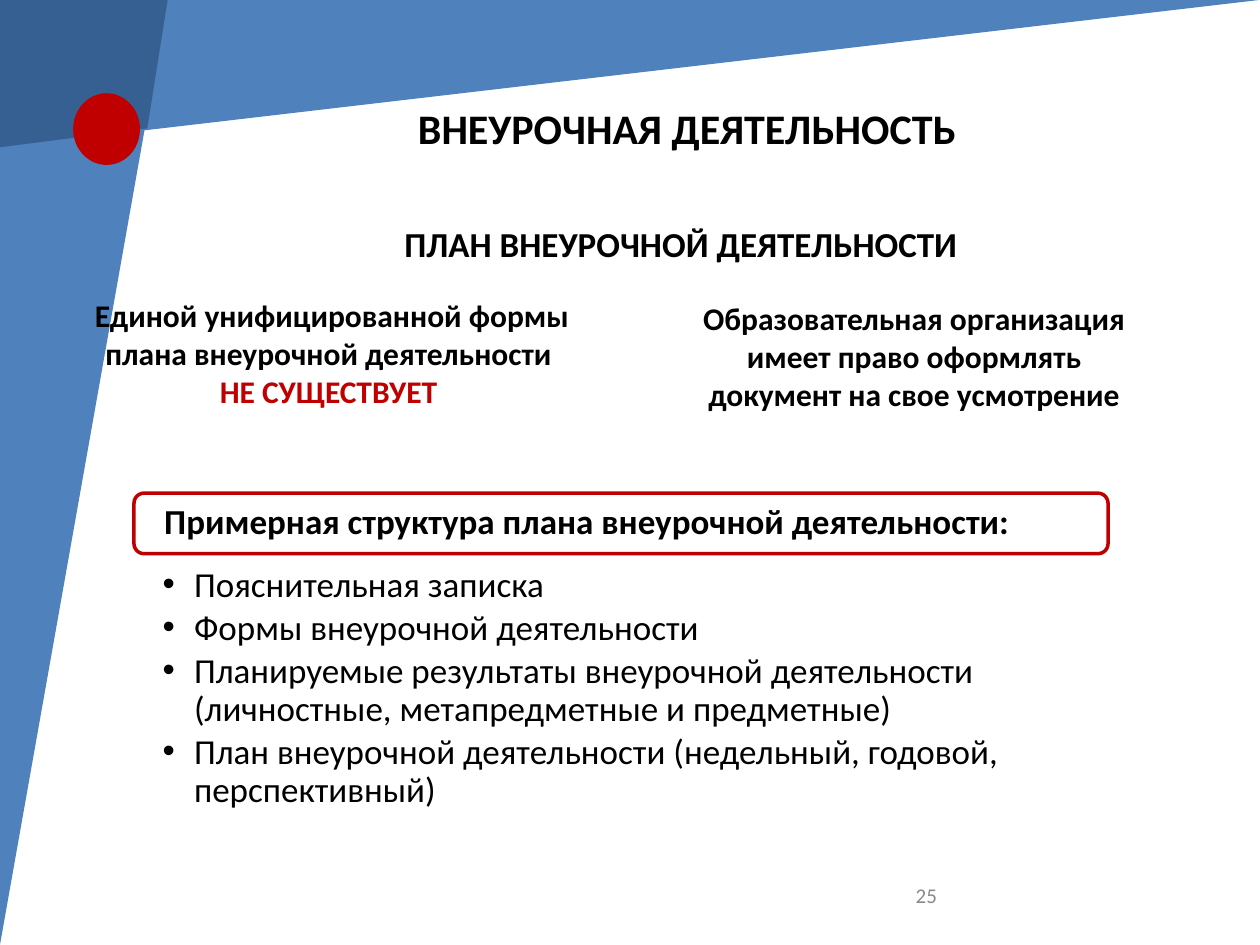
from pptx import Presentation
from pptx.dml.color import RGBColor
from pptx.enum import shapes, text
from pptx.oxml.ns import qn
from pptx.util import Pt

BLUE, NAVY, RED = "4F81BD", "376092", "C00000"
BLACK, GREY = "000000", "898989"
KIND = shapes.MSO_SHAPE
CENTER, LEFT = text.PP_ALIGN.CENTER, text.PP_ALIGN.LEFT
TOP, MIDDLE = text.MSO_ANCHOR.TOP, text.MSO_ANCHOR.MIDDLE

TITLE = "ВНЕУРОЧНАЯ ДЕЯТЕЛЬНОСТЬ "
SECTIONS = [
    "Пояснительная записка",
    "Формы внеурочной деятельности",
    "Планируемые результаты внеурочной деятельности (личностные, метапредметные и предметные)",
    "План внеурочной деятельности (недельный, годовой, перспективный)",
]
LABELS = [
    ((194.4, 123.8, 389.5, 31.7), 20, True, CENTER, [("ПЛАН ВНЕУРОЧНОЙ ДЕЯТЕЛЬНОСТИ", BLACK)]),
    ((41.8, 165.6, 295.9, 72.7), 18, True, CENTER,
     [("Единой унифицированной формы плана внеурочной деятельности ", BLACK), ("НЕ СУЩЕСТВУЕТ ", RED)]),
    ((389.2, 167.4, 266.4, 72.7), 18, True, CENTER,
     [("Образовательная организация имеет право оформлять документ на свое усмотрение", BLACK)]),
    ((516.2, 500.8, 167.8, 28.8), 12, False, LEFT, [("25", GREY)]),
]
STRUCTURE = "Примерная структура плана внеурочной деятельности:"

WEDGES = [(720, 84.2), (95.8, 540)]
CORNER = [(0, 0), (95.8, 0), (84.2, 73.4), (0, 84.2)]
BADGE = (41.8, 53.3, 38.2, 41)


def color(code):
    return RGBColor.from_string(code)


def paint(shape, fill=None, line=None):
    shape.shadow.inherit = False
    if fill:
        shape.fill.solid()
        shape.fill.fore_color.rgb = color(fill)
    else:
        shape.fill.background()
    if line:
        shape.line.color.rgb = color(line)
        shape.line.width = Pt(2)
    else:
        shape.line.fill.background()
    return shape


def add_preset(slide, kind, box, fill=None, line=None):
    return paint(slide.shapes.add_shape(kind, *map(Pt, box)), fill, line)


def add_outline(slide, points, fill):
    builder = slide.shapes.build_freeform(*map(Pt, points[0]), scale=1.0)
    builder.add_line_segments([(Pt(x), Pt(y)) for x, y in points[1:]])
    return paint(builder.convert_to_shape(), fill)


def place(shape, box):
    shape.left, shape.top, shape.width, shape.height = map(Pt, box)


def write(shape, lines, size, bold=False, align=LEFT, anchor=TOP, insets=(7.2, 3.6, 7.2, 3.6), spacing=1.0):
    frame = shape.text_frame
    frame.word_wrap = True
    frame.auto_size = text.MSO_AUTO_SIZE.NONE
    frame.vertical_anchor = anchor
    frame.margin_left, frame.margin_top, frame.margin_right, frame.margin_bottom = map(Pt, insets)
    frame.text = "\n".join(words for words, _ in lines)
    for paragraph, (_, ink) in zip(frame.paragraphs, lines):
        paragraph.alignment = align
        paragraph.line_spacing = spacing
        paragraph.space_before = Pt(0)
        font = paragraph.font
        font.name, font.size, font.bold = "Calibri", Pt(size), bold
        font.color.rgb = color(ink)


def main():
    """Build the slide on the plan of extracurricular activities."""
    deck = Presentation()
    deck.slide_width, deck.slide_height = Pt(720), Pt(540)
    slide = deck.slides.add_slide(deck.slide_layouts[1])

    for width, height in WEDGES:
        wedge = add_preset(slide, KIND.RIGHT_TRIANGLE, (0, 0, width, height), BLUE)
        wedge.element.spPr.find(qn("a:xfrm")).set("flipV", "1")
    add_outline(slide, CORNER, NAVY)

    title, sections = slide.placeholders
    place(title, (144.7, 50.7, 501.1, 44.6))
    write(title, [(TITLE, BLACK)], 24, True, CENTER, MIDDLE, (7.2,) * 4)

    place(sections, (46.8, 299.5, 591.1, 182.2))
    write(sections, [(name, BLACK) for name in SECTIONS], 20, insets=(46.1, 24.5, 46.1, 11.5), spacing=0.9)
    for paragraph in sections.text_frame.paragraphs:
        paragraph.space_after = Pt(3)
        properties = paragraph._p.get_or_add_pPr()
        properties.set("marL", str(Pt(18)))
        properties.set("indent", str(Pt(-18)))

    structure = add_preset(slide, KIND.ROUNDED_RECTANGLE, (76.6, 281.8, 556.6, 34.6), line=RED)
    write(structure, [(STRUCTURE, BLACK)], 20, True, LEFT, MIDDLE, (15.6, 0, 15.6, 0), 0.9)

    for box, size, bold, align, lines in LABELS:
        write(slide.shapes.add_textbox(*map(Pt, box)), lines, size, bold, align)

    add_preset(slide, KIND.OVAL, BADGE, RED)

    deck.save("out.pptx")


if __name__ == "__main__":
    main()
